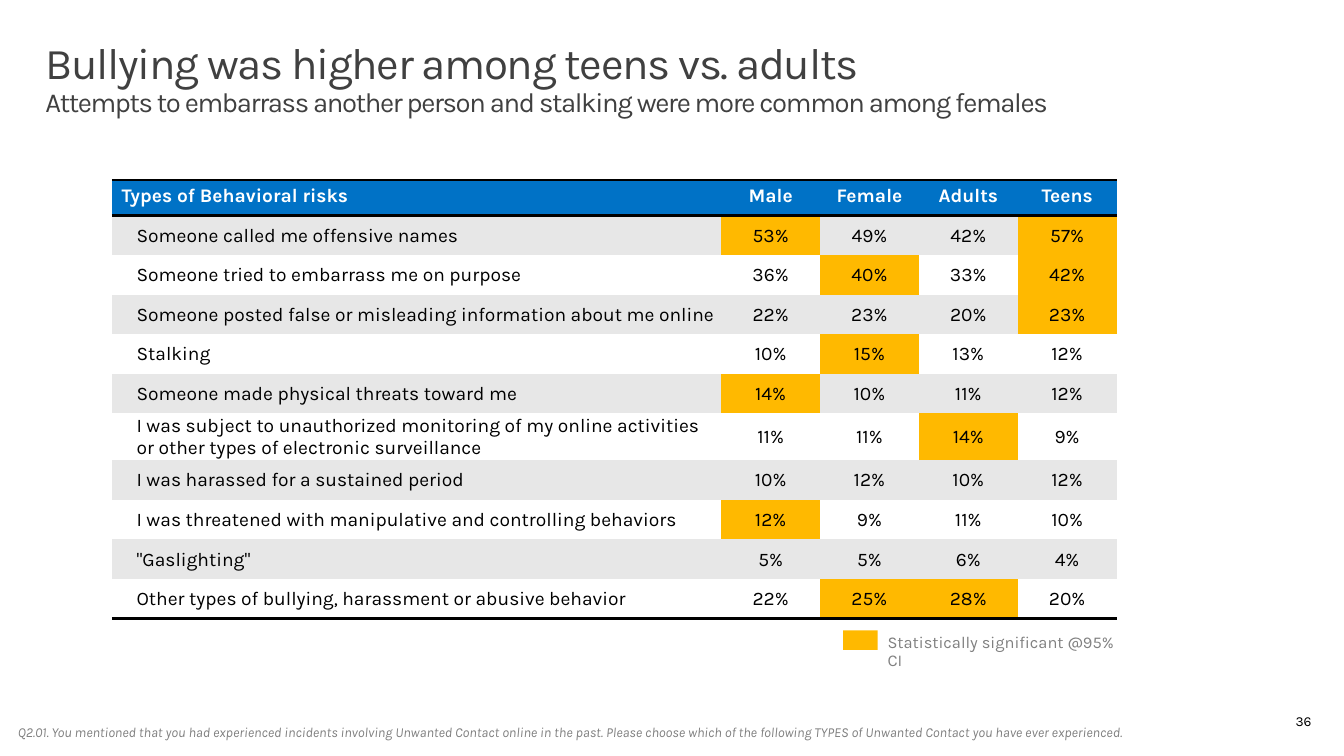
from pptx import Presentation
from pptx.dml.color import RGBColor
from pptx.enum.shapes import MSO_SHAPE
from pptx.enum.text import MSO_ANCHOR as Anchor, PP_ALIGN as Align
from pptx.oxml.ns import qn
from pptx.util import Pt
from lxml.etree import SubElement

FONT = "Karla"
COLORS = {
    "header": "0072C6",
    "significant": "FFB900",
    "band": "E7E7E7",
    "white": "FFFFFF",
    "black": "000000",
    "title": "404040",
    "muted": "808080",
}
NO_GRID_STYLE = "{2D5ABB26-0587-4C30-8999-92F81FD0307C}"

GROUPS = ["Male", "Female", "Adults", "Teens"]
# Risk, percentages by group, groups that are significantly higher
RISKS = [
    ("Someone called me offensive names", (53, 49, 42, 57), ("Male", "Teens")),
    ("Someone tried to embarrass me on purpose", (36, 40, 33, 42), ("Female", "Teens")),
    ("Someone posted false or misleading information about me online",
     (22, 23, 20, 23), ("Teens",)),
    ("Stalking", (10, 15, 13, 12), ("Female",)),
    ("Someone made physical threats toward me", (14, 10, 11, 12), ("Male",)),
    ("I was subject to unauthorized monitoring of my online activities "
     "or other types of electronic surveillance", (11, 11, 14, 9), ("Adults",)),
    ("I was harassed for a sustained period", (10, 12, 10, 12), ()),
    ("I was threatened with manipulative and controlling behaviors",
     (12, 9, 11, 10), ("Male",)),
    ('"Gaslighting"', (5, 5, 6, 4), ()),
    ("Other types of bullying, harassment or abusive behavior",
     (22, 25, 28, 20), ("Female", "Adults")),
]
HEADER_HEIGHT, RISK_HEIGHT, WRAPPED_HEIGHT = 26.1, 28.8, 34.2
RISK_WIDTH, GROUP_WIDTH = 444, 72


def rgb(name):
    return RGBColor.from_string(COLORS[name])


def set_all(target, values):
    for name, value in values.items():
        setattr(target, name, value)


def add_run(paragraph, text, size, color, spacing=0, **style):
    """Add a styled run; spacing is the letter spacing in points."""
    run = paragraph.add_run()
    run.text = text
    set_all(run.font, {"name": FONT, "size": Pt(size), **style})
    run.font.color.rgb = rgb(color)
    if spacing:
        run.font._element.set("spc", str(spacing * 100))


def add_text(slide, box, insets, line_spacing=0.9, align=Align.LEFT,
             anchor=Anchor.TOP, wrap=True):
    """Add an empty text box and return its paragraph."""
    frame = slide.shapes.add_textbox(*map(Pt, box)).text_frame
    across, down = map(Pt, insets)
    set_all(frame, {
        "word_wrap": wrap, "vertical_anchor": anchor,
        "margin_left": across, "margin_right": across,
        "margin_top": down, "margin_bottom": down,
    })
    paragraph = frame.paragraphs[0]
    set_all(paragraph, {"alignment": align, "line_spacing": line_spacing})
    return paragraph


def add_rules(cell, sides):
    """Draw black rules on the given sides, T before B."""
    properties = cell._tc.get_or_add_tcPr()
    for side in sides:
        line = SubElement(properties, qn(f"a:ln{side}"), w=str(Pt(2)))
        fill = SubElement(line, qn("a:solidFill"))
        SubElement(fill, qn("a:srgbClr"), val=COLORS["black"])


def fill_cell(cell, text, fill, color="black", bold=False, align=Align.LEFT,
              rules="", **layout):
    add_rules(cell, rules)
    cell.fill.solid()
    cell.fill.fore_color.rgb = rgb(fill)
    set_all(cell, layout)
    paragraph = cell.text_frame.paragraphs[0]
    paragraph.alignment = align
    add_run(paragraph, text, 14, color, bold=bold)


def add_risk_table(slide):
    heights = [HEADER_HEIGHT] + [
        WRAPPED_HEIGHT if len(risk) > 80 else RISK_HEIGHT for risk, _, _ in RISKS]
    widths = [RISK_WIDTH] + [GROUP_WIDTH] * len(GROUPS)
    frame = slide.shapes.add_table(len(heights), len(widths), Pt(81.5), Pt(131),
                                   Pt(sum(widths)), Pt(sum(heights)))
    frame._element.find(f".//{qn('a:tableStyleId')}").text = NO_GRID_STYLE
    table = frame.table
    for column, width in zip(table.columns, widths):
        column.width = Pt(width)
    for row, height in zip(table.rows, heights):
        row.height = Pt(height)

    for column, heading in enumerate(["Types of Behavioral risks"] + GROUPS):
        fill_cell(table.cell(0, column), heading, "header", "white", True,
                  Align.CENTER if column else Align.LEFT, "TB")

    layout = {"vertical_anchor": Anchor.MIDDLE, "margin_right": Pt(0.7),
              "margin_top": Pt(0.7), "margin_bottom": Pt(0)}
    for row, (risk, shares, significant) in enumerate(RISKS, 1):
        band = "band" if row % 2 else "white"
        rules = "B" if row == len(RISKS) else ""
        fill_cell(table.cell(row, 0), risk, band, rules=rules,
                  margin_left=Pt(18), **layout)
        for column, (group, share) in enumerate(zip(GROUPS, shares), 1):
            fill_cell(table.cell(row, column), f"{share}%",
                      "significant" if group in significant else band,
                      align=Align.CENTER, rules=rules, margin_left=Pt(0.7), **layout)


def add_legend(slide):
    legend = add_text(slide, (632.2, 450.7, 202.3, 49.7), (14.4, 11.5))
    add_run(legend, "Statistically significant @95% CI", 12, "muted")
    swatch = slide.shapes.add_shape(MSO_SHAPE.RECTANGLE, Pt(614.2), Pt(459.2),
                                    Pt(25.2), Pt(14.4))
    swatch.shadow.inherit = False
    swatch.fill.solid()
    swatch.fill.fore_color.rgb = rgb("significant")
    swatch.line.fill.background()


def main():
    deck = Presentation()
    set_all(deck, {"slide_width": Pt(979.2), "slide_height": Pt(550.8)})
    slide = deck.slides.add_slide(deck.slide_layouts[6])

    title = add_text(slide, (21.6, 23, 936, 72), (11.5, 7.2))
    add_run(title, "Bullying was higher among teens vs. adults", 32, "title", -1)
    title.add_line_break()
    add_run(title, "Attempts to embarrass another person and stalking were more "
            "common among females", 20, "title", -1)

    page = add_text(slide, (734.4, 510.5, 228.2, 29.5), (7.2, 3.6), 1,
                    Align.RIGHT, Anchor.MIDDLE)
    add_run(page, "36", 10, "black")

    question = add_text(slide, (-1.4, 523.4, 897.8, 33.8), (14.4, 11.5), wrap=False)
    add_run(question, "Q2.01. You mentioned that you had experienced incidents "
            "involving Unwanted Contact online in the past. Please choose which of "
            "the following TYPES of Unwanted Contact you have ever experienced.",
            10, "muted", italic=True)

    add_risk_table(slide)
    add_legend(slide)
    deck.save("out.pptx")


if __name__ == "__main__":
    main()
